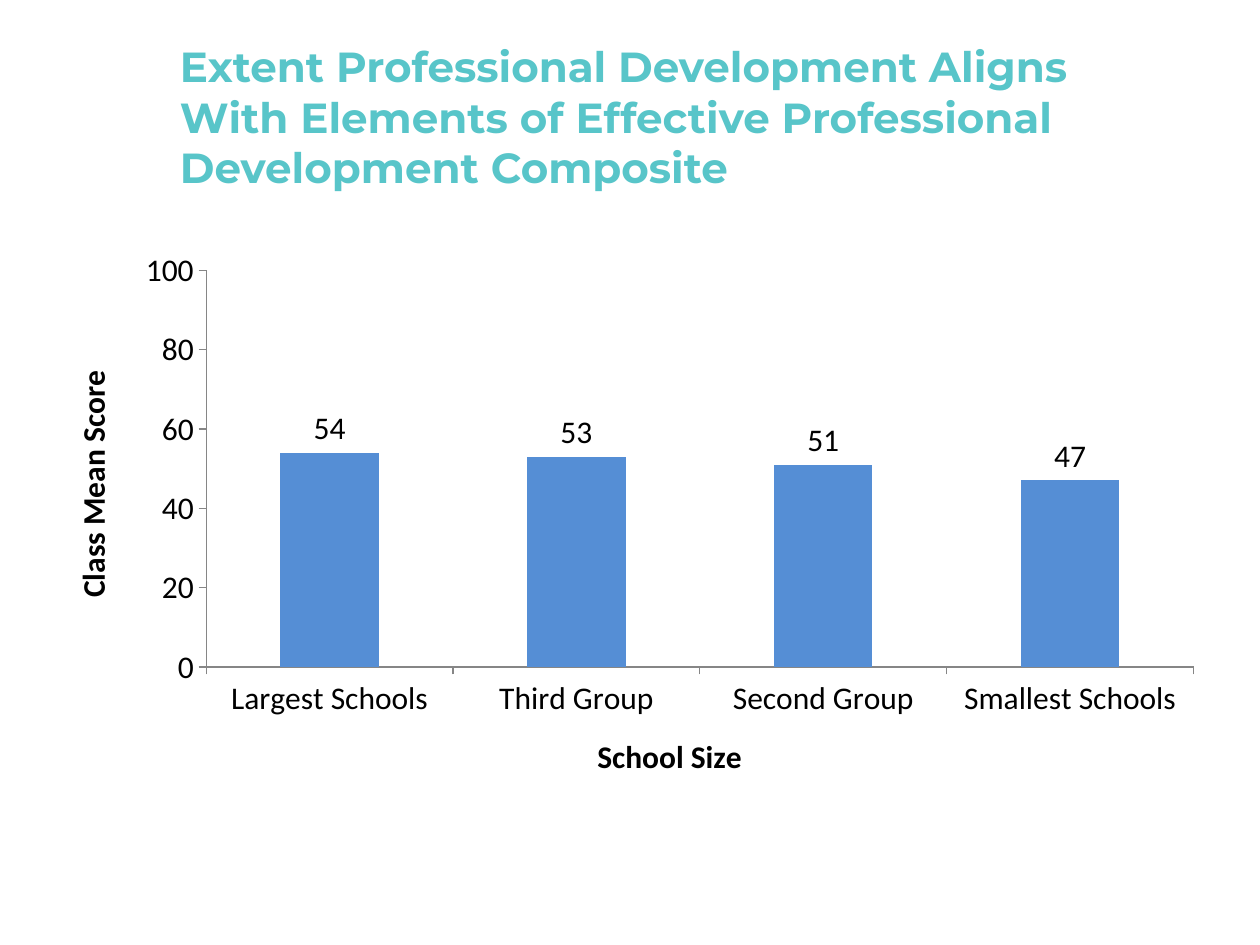
from lxml import etree
from pptx import Presentation
from pptx.chart.data import CategoryChartData
from pptx.dml.color import RGBColor
from pptx.enum import chart as ch, text
from pptx.oxml import ns
from pptx.util import Inches, Pt

COLORS = {"title": "58C5C9", "bar": "558ED5", "axis": "868686", "ink": "000000"}
SCORES = {
    "Largest Schools": 54,
    "Third Group": 53,
    "Second Group": 51,
    "Smallest Schools": 47,
}
PLOT_AREA = {"x": 0.14, "y": 0.05, "w": 0.84, "h": 0.7}


def rgb(name):
    return RGBColor.from_string(COLORS[name])


def style_font(font, size, color="ink", face="Calibri", bold=False):
    font.size, font.name, font.bold = Pt(size), face, bold
    font.color.rgb = rgb(color)


def write(frame, content, **style):
    """Put one formatted run into a text frame."""
    run = frame.paragraphs[0].add_run()
    run.text = content
    style_font(run.font, **style)


def add_heading(slide, content):
    heading = slide.shapes.add_textbox(
        Inches(1.33), Inches(0.3), Inches(8.17), Inches(1.25))
    frame = heading.text_frame
    frame.word_wrap = True
    frame.vertical_anchor = text.MSO_ANCHOR.MIDDLE
    write(frame, content, size=24, color="title", face="Montserrat", bold=True)


def style_axis(axis, title):
    axis.has_major_gridlines = False
    axis.major_tick_mark = ch.XL_TICK_MARK.OUTSIDE
    axis.minor_tick_mark = ch.XL_TICK_MARK.NONE
    axis.format.line.color.rgb = rgb("axis")
    axis.format.line.width = Pt(0.75)
    style_font(axis.tick_labels.font, 18)
    write(axis.axis_title.text_frame, title, size=18, bold=True)


def place_plot(chart):
    """Fix the inner plot area as fractions of the chart."""
    plot_area = chart.plots[0]._element.getparent()
    for old in plot_area.findall(ns.qn("c:layout")):
        plot_area.remove(old)
    layout = etree.Element(ns.qn("c:layout"))
    manual = etree.SubElement(layout, ns.qn("c:manualLayout"))
    settings = {"layoutTarget": "inner", "xMode": "edge", "yMode": "edge", **PLOT_AREA}
    for tag, value in settings.items():
        etree.SubElement(manual, ns.qn(f"c:{tag}"), val=str(value))
    plot_area.insert(0, layout)


def add_score_chart(slide):
    data = CategoryChartData()
    data.categories = list(SCORES)
    data.add_series("Series 1", list(SCORES.values()))
    chart = slide.shapes.add_chart(
        ch.XL_CHART_TYPE.COLUMN_CLUSTERED,
        Inches(0.33), Inches(1.92), Inches(9.33), Inches(4.5), data).chart
    chart.has_legend = False
    chart.has_title = False
    style_font(chart.font, 18)

    style_axis(chart.category_axis, "School Size")
    score_axis = chart.value_axis
    style_axis(score_axis, "Class Mean Score")
    score_axis.minimum_scale, score_axis.maximum_scale = 0, 100
    score_axis.major_unit = 20

    plot = chart.plots[0]
    plot.gap_width = 151
    plot.vary_by_categories = False
    bars = plot.series[0]
    bars.format.fill.solid()
    bars.format.fill.fore_color.rgb = rgb("bar")
    labels = bars.data_labels
    labels.show_value = True
    labels.position = ch.XL_LABEL_POSITION.OUTSIDE_END
    style_font(labels.font, 18)
    place_plot(chart)


def main():
    deck = Presentation()
    deck.slide_width, deck.slide_height = Inches(10), Inches(7.5)
    slide = deck.slides.add_slide(deck.slide_layouts[6])
    add_heading(slide, "Extent Professional Development Aligns With Elements "
                       "of Effective Professional Development Composite")
    add_score_chart(slide)
    deck.save("out.pptx")


if __name__ == "__main__":
    main()
